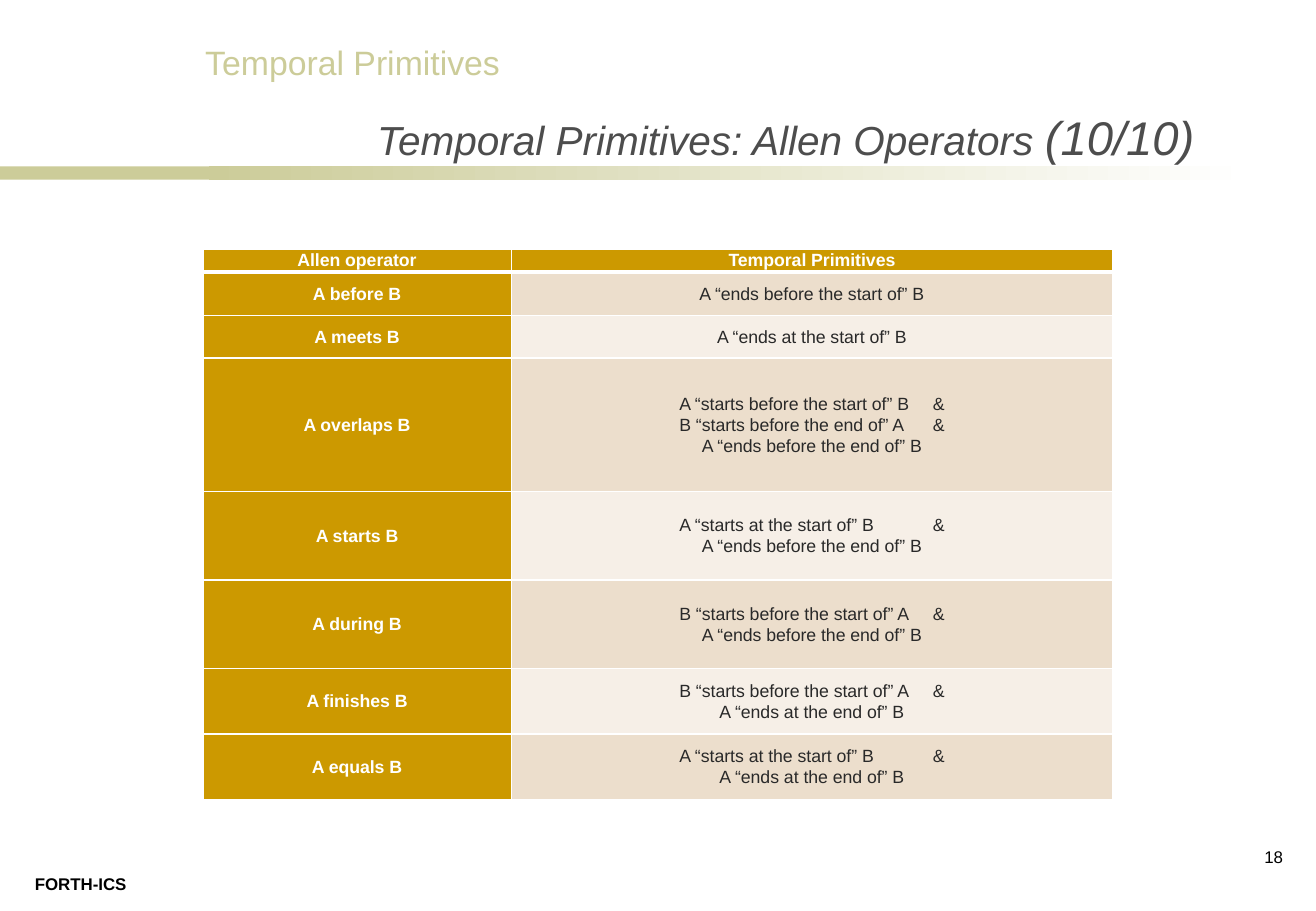
"""Build the slide that maps Allen operators to temporal primitives."""
import lxml.etree
import pptx
import pptx.dml.color
import pptx.enum.shapes
import pptx.enum.text
import pptx.oxml
import pptx.oxml.ns
import pptx.util

Cm = pptx.util.Cm
Align = pptx.enum.text.PP_ALIGN
Anchor = pptx.enum.text.MSO_ANCHOR

COLORS = {
    "khaki": "CCCC99",
    "white": "FFFFFF",
    "black": "000000",
    "title": "4D4D4D",
    "gold": "CC9900",
    "body": "292929",
    "sand": "ECDECC",
    "cream": "F6EFE7",
}
ROWS = [
    ("Allen operator", ["Temporal Primitives"], 0.46),
    ("A before B", ["A “ends before the start of” B"], 0.91),
    ("A meets B", ["A “ends at the start of” B"], 0.89),
    ("A overlaps B", ["A “starts before the start of” B\t&",
                      "B “starts before the end of” A\t&",
                      "A “ends before the end of” B"], 2.79),
    ("A starts B", ["A “starts at the start of” B\t&",
                    "A “ends before the end of” B"], 1.85),
    ("A during B", ["B “starts before the start of” A\t&",
                    "A “ends before the end of” B"], 1.85),
    ("A finishes B", ["B “starts before the start of” A\t&",
                      "A “ends at the end of” B"], 1.37),
    ("A equals B", ["A “starts at the start of” B\t&",
                    "A “ends at the end of” B"], 1.37),
]


def color(name):
    return pptx.dml.color.RGBColor.from_string(COLORS[name])


def write(para, text, size=10.5, fill="black", bold=False, italic=False, align=Align.LEFT):
    para.alignment = align
    span = para.add_run()
    span.text = text
    span.font.name = "Arial"
    span.font.size = pptx.util.Pt(size)
    span.font.bold = bold
    span.font.italic = italic
    span.font.color.rgb = color(fill)


deck = pptx.Presentation()
deck.slide_width, deck.slide_height = Cm(27.51), Cm(19.05)
page = deck.slides.add_slide(deck.slide_layouts[5])

for left, width, fades in [(0, 6.43, False), (4.37, 21.79, True)]:
    band = page.shapes.add_shape(
        pptx.enum.shapes.MSO_SHAPE.RECTANGLE, Cm(left), Cm(3.48), Cm(width), Cm(0.28))
    band.shadow.inherit = False
    band.line.fill.background()
    if fades:
        band.fill.gradient()
        band.fill.gradient_angle = 0
        for stop, name in zip(band.fill.gradient_stops, ["khaki", "white"]):
            stop.color.rgb = color(name)
    else:
        band.fill.solid()
        band.fill.fore_color.rgb = color("khaki")

LABELS = [
    ("Temporal Primitives", (4.04, 0.74, 6.73, 1.12), False,
     dict(size=20, fill="khaki")),
    ("FORTH-ICS", (0.48, 18.14, 2.46, 0.69), False, dict(size=10, bold=True)),
    ("18", (25.83, 17.58, 1.24, 1.07), True, dict(size=10, align=Align.RIGHT)),
]
for text, place, wraps, style in LABELS:
    box = page.shapes.add_textbox(*map(Cm, place))
    box.text_frame.word_wrap = wraps
    write(box.text_frame.paragraphs[0], text, **style)

title = page.shapes.title
title.left, title.top, title.width, title.height = map(Cm, (5.36, 1.98, 19.86, 1.6))
title.text_frame.auto_size = pptx.enum.text.MSO_AUTO_SIZE.NONE
title.text_frame.vertical_anchor = Anchor.BOTTOM
for text, size in [("Temporal Primitives: Allen Operators ", 24), ("(10/10)", 28)]:
    write(title.text_frame.paragraphs[0], text, size=size, fill="title",
          italic=True, align=Align.RIGHT)

table = page.shapes.add_table(
    len(ROWS), 2, Cm(4.24), Cm(5.21), Cm(19.02), Cm(11.49)).table
for column, width in zip(table.columns, [6.45, 12.57]):
    column.width = Cm(width)

for index, (operator, primitives, height) in enumerate(ROWS):
    table.rows[index].height = Cm(height)
    for side, lines in enumerate([[operator], primitives]):
        cell = table.cell(index, side)
        strong = index == 0 or side == 0
        cell.margin_left = cell.margin_right = Cm(0.13)
        cell.margin_top = cell.margin_bottom = 0
        cell.vertical_anchor = Anchor.MIDDLE if index else Anchor.TOP
        cell.fill.solid()
        cell.fill.fore_color.rgb = color(
            "gold" if strong else "sand" if index % 2 else "cream")

        for number, line in enumerate(lines):
            frame = cell.text_frame
            para = frame.add_paragraph() if number else frame.paragraphs[0]
            para.line_spacing = 1.07
            if "\t" in line:
                tabs = lxml.etree.SubElement(
                    para._p.get_or_add_pPr(), pptx.oxml.ns.qn("a:tabLst"))
                lxml.etree.SubElement(
                    tabs, pptx.oxml.ns.qn("a:tab"), pos=str(Cm(5.3)), algn="l")
            write(para, line, fill="white" if strong else "body", bold=strong,
                  align=Align.CENTER)

        for place, edge in enumerate(["lnL", "lnR", "lnT", "lnB"]):
            thick = (index, edge) in [(0, "lnB"), (1, "lnT")]
            border = pptx.oxml.parse_xml(
                f'<a:{edge} {pptx.oxml.ns.nsdecls("a")} w="{pptx.util.Pt(3 if thick else 1)}">'
                f'<a:solidFill><a:srgbClr val="{COLORS["white"]}"/></a:solidFill></a:{edge}>')
            cell._tc.get_or_add_tcPr().insert(place, border)

deck.save("out.pptx")
